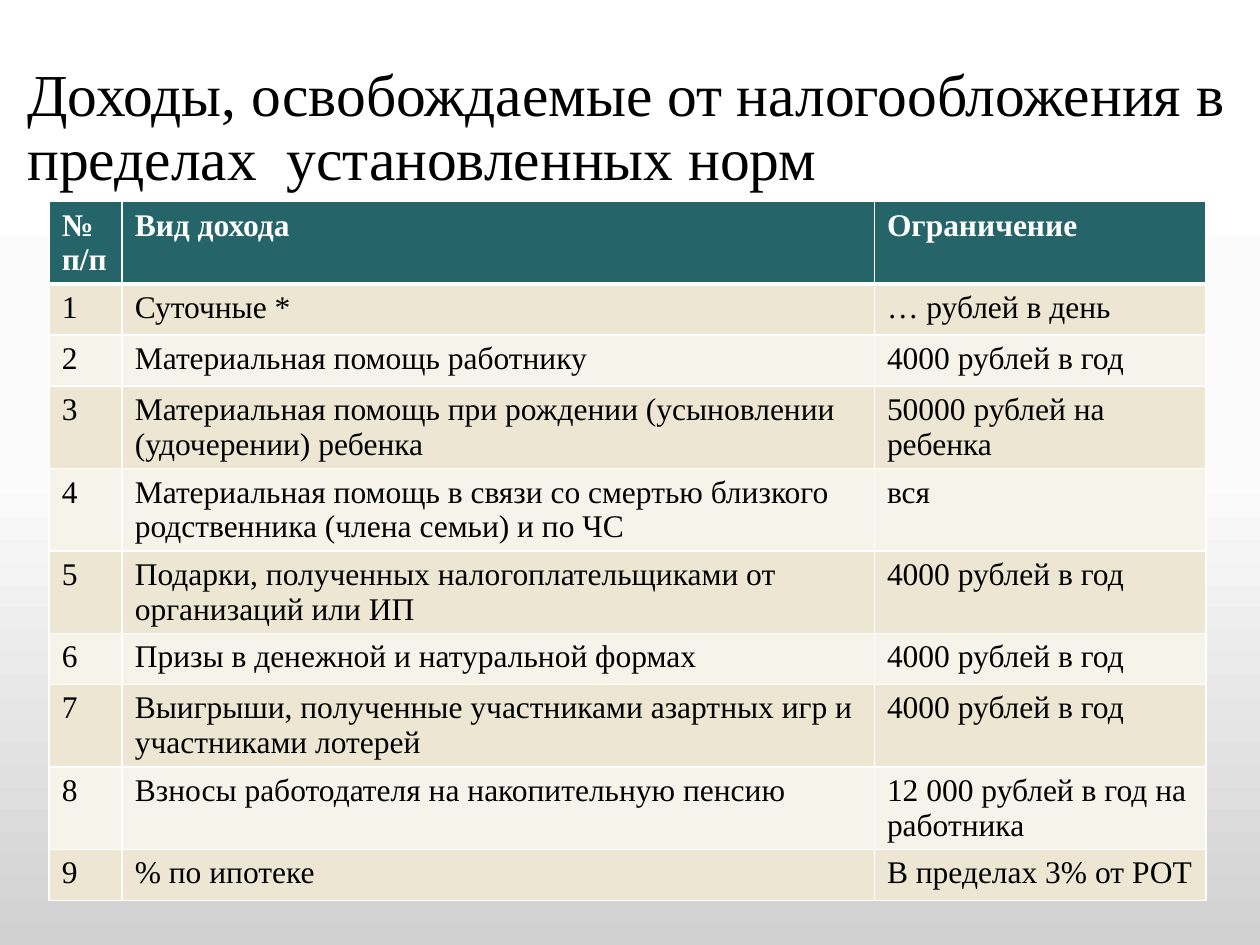
import dataclasses

import pptx
import pptx.dml.color
import pptx.enum.text
import pptx.oxml
import pptx.oxml.ns
import pptx.util
import copy


@dataclasses.dataclass(frozen=True)
class Theme:
    font: str = "Times New Roman"
    title_size: float = 34
    table_size: float = 18
    text: str = "000000"
    header_text: str = "FFFFFF"
    header_fill: str = "256569"
    band_fills: tuple = ("EDE6D3", "F6F3EA")
    border: str = "FFFFFF"
    border_width: float = 1
    header_border_width: float = 3
    background: tuple = ((0, "FFFFFF"), (0.5, "FBFBFB"), (1, "D1D1D1"))


THEME = Theme()
TITLE = "Доходы, освобождаемые от налогообложения в пределах  установленных норм"
HEADER = ("№ п/п", "Вид дохода", "Ограничение")
INCOMES = (
    ("Суточные *", "… рублей в день"),
    ("Материальная помощь работнику", "4000 рублей в год"),
    ("Материальная помощь при рождении (усыновлении (удочерении) ребенка", "50000 рублей на ребенка"),
    ("Материальная помощь в связи со смертью близкого родственника (члена семьи) и по ЧС", "вся"),
    ("Подарки, полученных налогоплательщиками от организаций или ИП", "4000 рублей в год"),
    ("Призы в денежной и натуральной формах", "4000 рублей в год"),
    ("Выигрыши, полученные участниками азартных игр и участниками лотерей", "4000 рублей в год"),
    ("Взносы работодателя на накопительную пенсию", "12 000 рублей в год на работника"),
    ("% по ипотеке", "В пределах 3% от РОТ"),
)
COLUMN_WIDTHS = (41.76, 429.84, 189.36)
HEADER_HEIGHT = 41.04
ROW_HEIGHT = 29.2


def rgb(color):
    return pptx.dml.color.RGBColor.from_string(color)


def write_text(text_frame, text, *, size, color=THEME.text, bold=False, line_spacing=None):
    text_frame.word_wrap = True
    paragraph = text_frame.paragraphs[0]
    paragraph.line_spacing = line_spacing
    run = paragraph.add_run()
    run.text = text
    run.font.name = THEME.font
    run.font.size = pptx.util.Pt(size)
    run.font.bold = bold
    run.font.color.rgb = rgb(color)


def paint_background(slide):
    fill = slide.background.fill
    fill.gradient()
    fill.gradient_angle = 270
    last_stop = fill.gradient_stops[1]
    stop_list = slide.element.find(".//" + pptx.oxml.ns.qn("a:gsLst"))
    stop_list.append(copy.deepcopy(stop_list[-1]))
    for stop, (position, color) in zip(fill.gradient_stops, THEME.background):
        stop.position = position
        stop.color.rgb = rgb(color)


def add_title(slide):
    box = slide.shapes.add_textbox(*map(pptx.util.Pt, (8.64, 31.68, 708.48, 84.24)))
    box.text_frame.vertical_anchor = pptx.enum.text.MSO_ANCHOR.MIDDLE
    write_text(box.text_frame, TITLE, size=THEME.title_size, line_spacing=0.9)


def set_borders(cell, **widths):
    properties = cell._tc.get_or_add_tcPr()
    for side in "LRTB":
        width = pptx.util.Pt(widths.get(side, THEME.border_width))
        properties.append(pptx.oxml.parse_xml(
            f'<a:ln{side} {pptx.oxml.ns.nsdecls("a")} w="{width}">'
            f'<a:solidFill><a:srgbClr val="{THEME.border}"/></a:solidFill></a:ln{side}>'))


def format_cell(cell, text, row_index):
    if row_index == 0:
        fill, color = THEME.header_fill, THEME.header_text
        set_borders(cell, B=THEME.header_border_width)
    else:
        fill, color = THEME.band_fills[(row_index - 1) % 2], THEME.text
        top = THEME.header_border_width if row_index == 1 else THEME.border_width
        set_borders(cell, T=top)
    cell.fill.solid()
    cell.fill.fore_color.rgb = rgb(fill)
    write_text(cell.text_frame, text, size=THEME.table_size, color=color, bold=row_index == 0)


def add_income_table(slide):
    rows = [HEADER] + [(str(number), *income) for number, income in enumerate(INCOMES, 1)]
    height = HEADER_HEIGHT + ROW_HEIGHT * len(INCOMES)
    bounds = map(pptx.util.Pt, (28.08, 115.2, sum(COLUMN_WIDTHS), height))
    table = slide.shapes.add_table(len(rows), len(HEADER), *bounds).table
    for column, width in zip(table.columns, COLUMN_WIDTHS):
        column.width = pptx.util.Pt(width)
    for row_index, texts in enumerate(rows):
        table.rows[row_index].height = pptx.util.Pt(ROW_HEIGHT if row_index else HEADER_HEIGHT)
        for column_index, text in enumerate(texts):
            format_cell(table.cell(row_index, column_index), text, row_index)


def main():
    presentation = pptx.Presentation()
    presentation.slide_width = pptx.util.Pt(720)
    presentation.slide_height = pptx.util.Pt(540)
    slide = presentation.slides.add_slide(presentation.slide_layouts[6])
    paint_background(slide)
    add_income_table(slide)
    add_title(slide)
    presentation.save("out.pptx")


if __name__ == "__main__":
    main()
